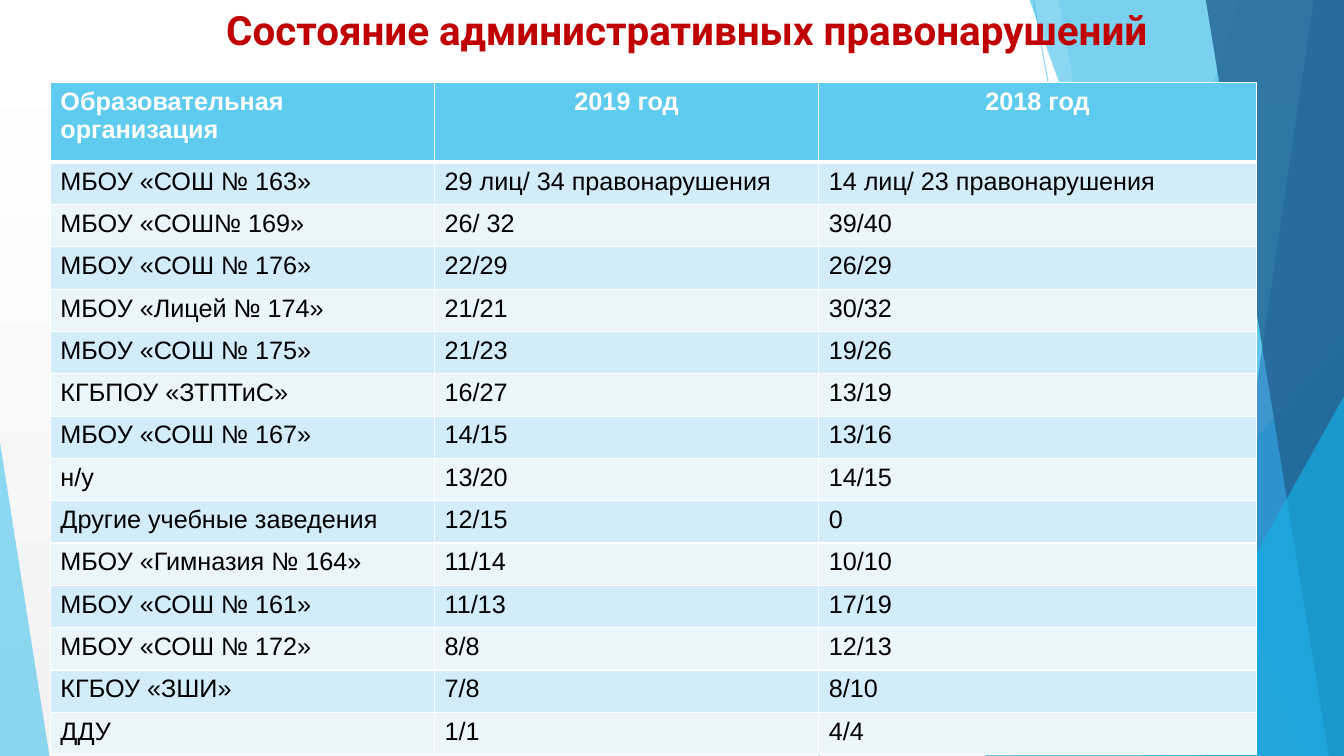
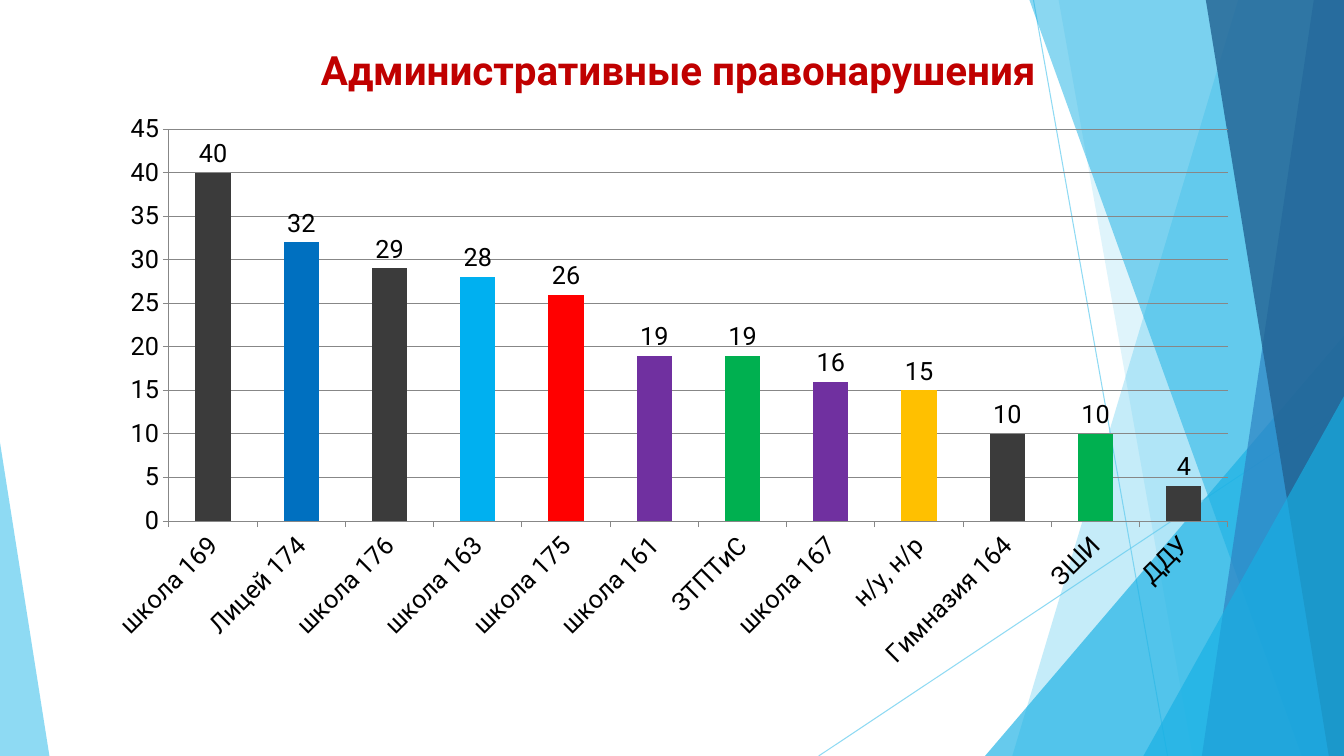
from lxml import etree
from pptx import Presentation
from pptx.chart.data import CategoryChartData
from pptx.dml.color import RGBColor
from pptx.enum.chart import XL_CHART_TYPE as ChartType, XL_LABEL_POSITION as LabelPosition
from pptx.enum.shapes import MSO_CONNECTOR as Connector, MSO_SHAPE as Shape
from pptx.enum.text import MSO_ANCHOR as Anchor, PP_ALIGN as Align
from pptx.oxml.ns import qn
from pptx.util import Inches, Pt

WIDTH, HEIGHT = 13.33, 7.5
TITLE_FONT, TABLE_FONT = "Roboto", "Arial"

WHITE = RGBColor(0xFF, 0xFF, 0xFF)
PALE_GREY = RGBColor(0xF2, 0xF2, 0xF2)
BLACK = RGBColor(0x00, 0x00, 0x00)
DARK_RED = RGBColor(0xC0, 0x00, 0x00)
SKY = RGBColor(0x5F, 0xCB, 0xEF)
AZURE = RGBColor(0x17, 0xB0, 0xE4)
STEEL = RGBColor(0x2E, 0x83, 0xC3)
NAVY = RGBColor(0x22, 0x62, 0x92)
BAND_DARK = RGBColor(0xD2, 0xEC, 0xF9)
BAND_LIGHT = RGBColor(0xEA, 0xF6, 0xFC)
GRID = RGBColor(0x87, 0x87, 0x87)
CHARCOAL = RGBColor(0x3B, 0x3B, 0x3B)
BLUE = RGBColor(0x00, 0x70, 0xC0)
LIGHT_BLUE = RGBColor(0x00, 0xB0, 0xF0)
RED = RGBColor(0xFF, 0x00, 0x00)
PURPLE = RGBColor(0x70, 0x30, 0xA0)
GREEN = RGBColor(0x00, 0xB0, 0x50)
AMBER = RGBColor(0xFF, 0xC0, 0x00)

TABLE_ROWS = [
    ("Образовательная организация", "2019 год", "2018 год"),
    ("МБОУ «СОШ № 163»", "29 лиц/ 34 правонарушения", "14 лиц/ 23 правонарушения"),
    ("МБОУ «СОШ№ 169»", "26/ 32", "39/40"),
    ("МБОУ «СОШ № 176»", "22/29", "26/29"),
    ("МБОУ «Лицей № 174»", "21/21", "30/32"),
    ("МБОУ «СОШ № 175»", "21/23", "19/26"),
    ("КГБПОУ «ЗТПТиС»", "16/27", "13/19"),
    ("МБОУ «СОШ № 167»", "14/15", "13/16"),
    ("н/у", "13/20", "14/15"),
    ("Другие учебные заведения", "12/15", "0"),
    ("МБОУ «Гимназия № 164»", "11/14", "10/10"),
    ("МБОУ «СОШ № 161»", "11/13", "17/19"),
    ("МБОУ «СОШ № 172»", "8/8", "12/13"),
    ("КГБОУ «ЗШИ»", "7/8", "8/10"),
    ("ДДУ", "1/1", "4/4"),
]

BARS = [
    ("школа 169", 40, CHARCOAL),
    ("Лицей 174", 32, BLUE),
    ("школа 176", 29, CHARCOAL),
    ("школа 163", 28, LIGHT_BLUE),
    ("школа 175", 26, RED),
    ("школа 161", 19, PURPLE),
    ("ЗТПТиС", 19, GREEN),
    ("школа 167", 16, PURPLE),
    ("н/у, н/р", 15, AMBER),
    ("Гимназия 164", 10, CHARCOAL),
    ("ЗШИ", 10, GREEN),
    ("ДДУ", 4, CHARCOAL),
]


def set_opacity(shape, percent):
    for color in shape.element.spPr.iter(qn("a:srgbClr")):
        etree.SubElement(color, qn("a:alpha")).set("val", str(percent * 1000))


def set_borders(cell, top, bottom):
    """Draw white cell borders; widths in points, sides are always 1."""
    properties = cell._tc.get_or_add_tcPr()
    for tag, width in (("lnL", 1), ("lnR", 1), ("lnT", top), ("lnB", bottom)):
        line = etree.SubElement(properties, qn(f"a:{tag}"), w=str(Pt(width)))
        fill = etree.SubElement(line, qn("a:solidFill"))
        etree.SubElement(fill, qn("a:srgbClr"), val=str(WHITE))


class Builder:
    """Holds the deck, its style and the current page."""

    def __init__(self):
        self.deck = Presentation()
        self.deck.slide_width = Inches(WIDTH)
        self.deck.slide_height = Inches(HEIGHT)
        self.page = None

    def new_page(self, bottom_color=WHITE):
        self.page = self.deck.slides.add_slide(self.deck.slide_layouts[6])
        fill = self.page.background.fill
        if bottom_color == WHITE:
            fill.solid()
            fill.fore_color.rgb = WHITE
        else:
            fill.gradient()
            fill.gradient_angle = 270
            for stop, color in zip(fill.gradient_stops, (WHITE, bottom_color)):
                stop.color.rgb = color
        self.backdrop()

    def backdrop(self):
        self.line(10.25, 0, 11.58, HEIGHT)
        self.line(WIDTH, 4.03, 8.12, HEIGHT)
        self.facet(12.28, 10.04, SKY, 36)
        self.facet(10.5, 11.83, SKY, 20)
        self.triangle(9.77, 3.33, 3.56, 1, AZURE, 66)
        self.facet(10.21, 12.91, AZURE, 50)
        self.facet(13.03, 11.92, STEEL, 70)
        self.facet(11.96, 13.18, NAVY, 80)
        self.triangle(11.34, 3.93, 1.99, 1, AZURE, 66)
        self.triangle(0, 4.39, 0.49, 0, SKY, 70)

    def line(self, x1, y1, x2, y2):
        line = self.page.shapes.add_connector(
            Connector.STRAIGHT, Inches(x1), Inches(y1), Inches(x2), Inches(y2))
        line.line.color.rgb = SKY
        line.line.width = Pt(0.75)
        set_opacity(line, 70)
        etree.SubElement(line.element.spPr, qn("a:effectLst"))

    def facet(self, top_x, bottom_x, color, opacity):
        """Fill from a slanted left edge to the right side of the page."""
        corners = [(WIDTH, 0), (WIDTH, HEIGHT), (bottom_x, HEIGHT)]
        outline = self.page.shapes.build_freeform(Inches(top_x), 0)
        outline.add_line_segments([(Inches(x), Inches(y)) for x, y in corners])
        self.paint(outline.convert_to_shape(), color, opacity)

    def triangle(self, left, top, width, apex, color, opacity):
        """Stand a triangle on the bottom edge of the page."""
        shape = self.page.shapes.add_shape(
            Shape.ISOSCELES_TRIANGLE, Inches(left), Inches(top),
            Inches(width), Inches(HEIGHT - top))
        shape.adjustments[0] = apex
        self.paint(shape, color, opacity)

    def paint(self, shape, color, opacity):
        shape.shadow.inherit = False
        shape.fill.solid()
        shape.fill.fore_color.rgb = color
        shape.line.fill.background()
        set_opacity(shape, opacity)

    def text(self, para, words, font, size, color, bold):
        span = para.add_run()
        span.text = words
        span.font.name = font
        span.font.size = Pt(size)
        span.font.color.rgb = color
        span.font.bold = bold

    def title(self, words, left, top, width, height):
        box = self.page.shapes.add_textbox(
            Inches(left), Inches(top), Inches(width), Inches(height))
        frame = box.text_frame
        frame.word_wrap = True
        frame.vertical_anchor = Anchor.TOP
        para = frame.paragraphs[0]
        para.alignment = Align.CENTER
        self.text(para, words, TITLE_FONT, 28.8, DARK_RED, True)

    def table(self, rows, left, top, widths, header_height, row_height):
        heights = [header_height] + [row_height] * (len(rows) - 1)
        table = self.page.shapes.add_table(
            len(rows), len(widths), Inches(left), Inches(top),
            Inches(sum(widths)), Inches(sum(heights))).table
        for column, width in zip(table.columns, widths):
            column.width = Inches(width)
        for r, (values, height) in enumerate(zip(rows, heights)):
            table.rows[r].height = Inches(height)
            header = r == 0
            band = SKY if header else (BAND_LIGHT, BAND_DARK)[r % 2]
            for c, value in enumerate(values):
                cell = table.cell(r, c)
                set_borders(cell, 3 if r == 1 else 1, 3 if header else 1)
                cell.fill.solid()
                cell.fill.fore_color.rgb = band
                para = cell.text_frame.paragraphs[0]
                if header and c > 0:
                    para.alignment = Align.CENTER
                self.text(para, value, TABLE_FONT, 18, WHITE if header else BLACK, header)

    def column_chart(self, bars, left, top, width, height):
        names, values, colors = zip(*bars)
        data = CategoryChartData()
        data.categories = names
        data.add_series("Series 1", values)
        chart = self.page.shapes.add_chart(
            ChartType.COLUMN_CLUSTERED, Inches(left), Inches(top),
            Inches(width), Inches(height), data).chart
        chart.has_legend = False
        chart.has_title = False
        chart.font.name = TITLE_FONT
        chart.font.size = Pt(18)
        chart.font.color.rgb = BLACK

        plot = chart.plots[0]
        plot.gap_width = 150
        plot.vary_by_categories = False
        plot.has_data_labels = True
        plot.data_labels.show_value = True
        plot.data_labels.position = LabelPosition.OUTSIDE_END
        for index, color in enumerate(colors):
            fill = plot.series[0].points[index].format.fill
            fill.solid()
            fill.fore_color.rgb = color

        scale = chart.value_axis
        scale.minimum_scale, scale.maximum_scale, scale.major_unit = 0, 45, 5
        scale.has_major_gridlines = True
        for part in (scale, scale.major_gridlines, chart.category_axis):
            part.format.line.color.rgb = GRID
            part.format.line.width = Pt(0.75)

        chart.category_axis.tick_labels.font.size = Pt(18)
        labels = chart.element.find(f".//{qn('c:catAx')}/{qn('c:txPr')}/{qn('a:bodyPr')}")
        labels.set("rot", str(-45 * 60000))
        labels.set("vert", "horz")


def main():
    builder = Builder()

    builder.new_page(PALE_GREY)
    builder.title("Состояние административных правонарушений", 1.11, 0, 11.41, 0.36)
    builder.table(TABLE_ROWS, 0.5, 0.82, (3.81, 3.81, 4.34), 0.79, 0.42)

    builder.new_page()
    builder.title("Административные правонарушения", 1.05, 0.4, 11.36, 0.5)
    builder.column_chart(BARS, 0.9, 1.02, 11.51, 5.73)

    builder.deck.save("out.pptx")


if __name__ == "__main__":
    main()
